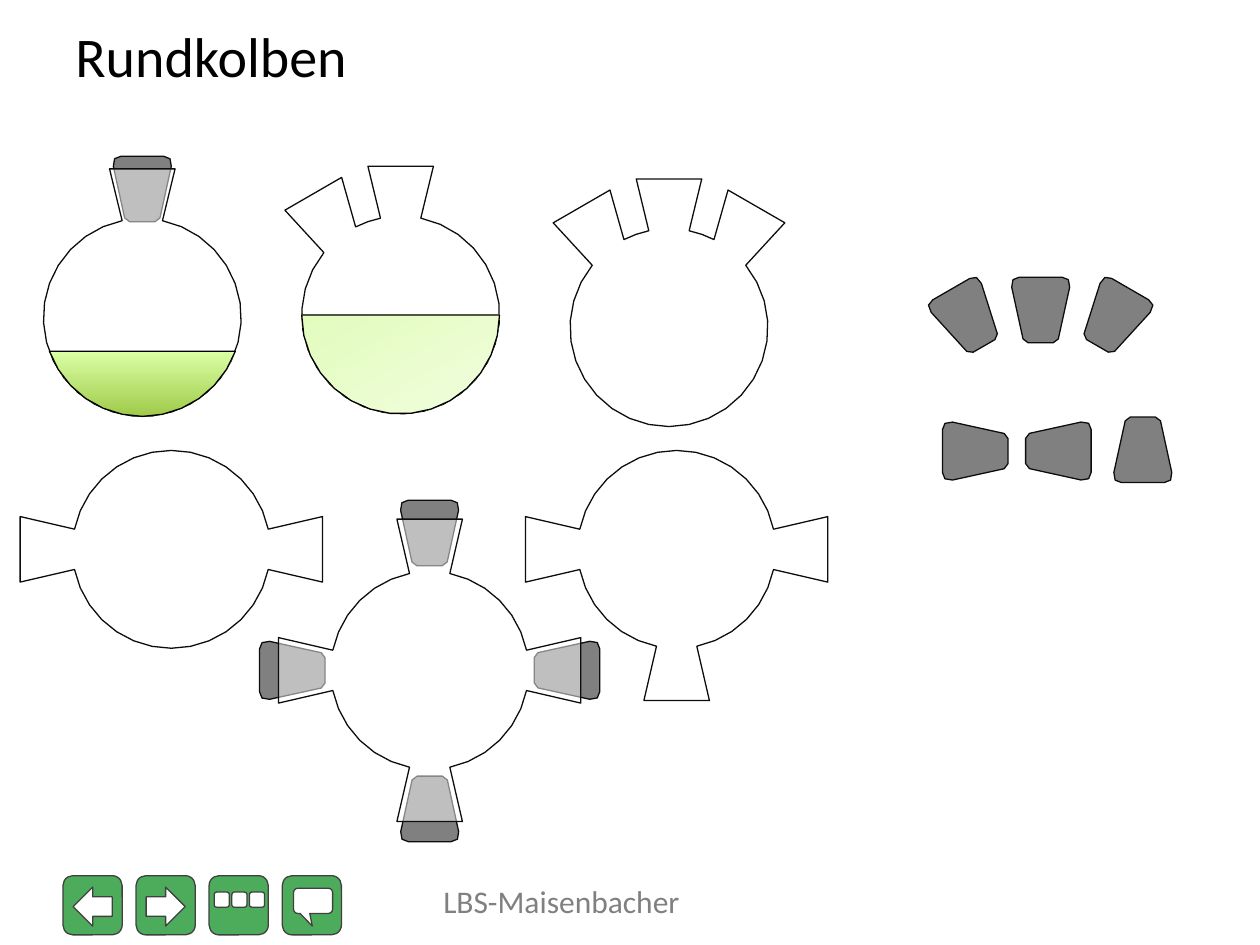
from math import asin, ceil, cos, degrees, radians, sin

from lxml.etree import SubElement
from pptx import Presentation
from pptx.dml.color import RGBColor
from pptx.enum.shapes import MSO_SHAPE
from pptx.enum.text import MSO_ANCHOR
from pptx.oxml.ns import qn
from pptx.util import Inches, Pt

WHITE = RGBColor(0xFF, 0xFF, 0xFF)
BLACK = RGBColor(0x00, 0x00, 0x00)
INK = RGBColor(0x0D, 0x0D, 0x0D)
RUBBER = RGBColor(0x80, 0x80, 0x80)
BUTTON = RGBColor(0x4D, 0xAC, 0x5C)
BUTTON_EDGE = RGBColor(0x40, 0x40, 0x40)
LIME = RGBColor(0xA0, 0xCA, 0x4A)
PALE_LIME = RGBColor(0xDA, 0xFF, 0xA5)
SOFT_GREEN = RGBColor(0xDA, 0xFD, 0xA7)
SOFTER_GREEN = RGBColor(0xE4, 0xFC, 0xC2)
MIST_GREEN = RGBColor(0xF5, 0xFF, 0xE7)

deck = Presentation()
deck.slide_width, deck.slide_height = Inches(10), Inches(7.5)
slide = deck.slides.add_slide(deck.slide_layouts[6])
CELL = deck.slide_width / 10


def paint(part, fill, edge):
    part.shadow.inherit = False
    part.fill.solid()
    part.fill.fore_color.rgb = fill
    part.line.color.rgb = edge
    part.line.width = Pt(0.75)
    return part


def outline(points, pivot, turn, fill, edge):
    corners = [(round(x * CELL), round(y * CELL)) for x, y in points]
    pen = slide.shapes.build_freeform(*corners[0], scale=1.0)
    pen.add_line_segments(corners[1:], close=True)
    part = pen.convert_to_shape()
    mid_x, mid_y = part.left + part.width / 2, part.top + part.height / 2
    c, s = cos(radians(turn)), sin(radians(turn))
    part.left = round(pivot[0] * CELL + mid_x * c - mid_y * s - part.width / 2)
    part.top = round(pivot[1] * CELL + mid_x * s + mid_y * c - part.height / 2)
    part.rotation = turn
    return paint(part, fill, edge)


BUTTON_SIZE, BUTTON_TOP = 0.47, 6.95
for column in range(4):
    left = 0.5 + 0.58 * column
    icons = [
        [(MSO_SHAPE.RIGHT_ARROW, 0.08, 0.09, 0.31, 0.31, 180)],
        [(MSO_SHAPE.RIGHT_ARROW, 0.08, 0.09, 0.31, 0.31, 0)],
        [(MSO_SHAPE.ROUNDED_RECTANGLE, 0.04 + 0.14 * n, 0.13, 0.12, 0.12, 0) for n in range(3)],
        [(MSO_SHAPE.ROUNDED_RECTANGULAR_CALLOUT, 0.09, 0.1, 0.31, 0.2, 0)],
    ][column]
    plate = (MSO_SHAPE.ROUNDED_RECTANGLE, 0, 0, BUTTON_SIZE, BUTTON_SIZE, 0)
    for preset, x, y, w, h, turn in [plate] + icons:
        box = [round(v * CELL) for v in (left + x, BUTTON_TOP + y, w, h)]
        part = slide.shapes.add_shape(preset, *box)
        part.rotation = turn
        paint(part, BUTTON if w == BUTTON_SIZE else WHITE, BUTTON_EDGE)
        if preset == MSO_SHAPE.ROUNDED_RECTANGULAR_CALLOUT:
            part.adjustments[0], part.adjustments[1] = -0.02, 1

STOPPER_SIDE = [(0.17, -0.26), (0.22, -0.24), (0.23, -0.18), (0.14, 0.23), (0.1, 0.26)]
stopper = STOPPER_SIDE + [(-x, y) for x, y in reversed(STOPPER_SIDE)]
for x, y, turn in [
    (1.13, 1.5, 0), (3.41, 4.23, 0), (4.5, 5.32, 90), (2.32, 5.32, 270), (3.41, 6.42, 180),
    (7.68, 2.52, 330), (8.84, 2.52, 30), (8.26, 2.46, 0),
    (7.74, 3.58, 270), (8.4, 3.58, 90), (9.07, 3.57, 180),
]:
    outline(stopper, (x, y), turn, RUBBER, INK)

BULB, MOUTH, THROAT = 0.785, 0.26, 0.16
ARC_STEP = 12
FLASKS = [
    ((1.13, 2.52), 0, 1.18, [(0, 0)], 50),
    ((5.37, 4.36), 180, 1.2, [(0, 0), (90, 0), (270, 0)], 50),
    ((5.31, 2.6), 330, 1.18, [(0, -0.12), (30, 0), (60, 0.12)], 50),
    ((3.18, 2.5), 330, 1.18, [(0, -0.12), (30, 0)], 100),
    ((1.36, 4.36), 90, 1.2, [(0, 0), (180, 0)], 50),
    ((3.41, 5.32), 180, 1.2, [(0, 0), (90, 0), (180, 0), (270, 0)], 50),
]
for center, turn, reach, necks, opacity in FLASKS:
    glass = []
    following = necks[1:] + [(necks[0][0] + 360, necks[0][1])]
    for (tilt, shift), (next_tilt, next_shift) in zip(necks, following):
        c, s = cos(radians(tilt)), sin(radians(tilt))
        for side in (shift - MOUTH, shift + MOUTH):
            glass.append((side * c + reach * s, side * s - reach * c))
        start = tilt + degrees(asin((shift + THROAT) / BULB))
        end = next_tilt + degrees(asin((next_shift - THROAT) / BULB))
        steps = ceil((end - start) / ARC_STEP)
        for step in range(steps + 1):
            angle = radians(start + (end - start) * step / steps)
            glass.append((BULB * sin(angle), -BULB * cos(angle)))
    flask = outline(glass, center, turn, WHITE, INK)
    if opacity < 100:
        tint = flask._element.spPr.find(".//" + qn("a:srgbClr"))
        SubElement(tint, qn("a:alpha"), val=str(opacity * 1000))

for center, turn, start, end, direction, stops in [
    ((1.13, 2.52), 0, 110, 250, 90, [(0, LIME), (100, PALE_LIME)]),
    ((3.18, 2.5), 330, 90, 270, 270, [(0, SOFT_GREEN), (35, SOFTER_GREEN), (100, MIST_GREEN)]),
]:
    steps = ceil((end - start) / ARC_STEP)
    angles = [radians(start + (end - start) * n / steps - turn) for n in range(steps + 1)]
    pool = [(BULB * sin(a), -BULB * cos(a)) for a in angles]
    liquid = outline(pool, center, turn, WHITE, BLACK)
    liquid.fill.gradient()
    liquid.fill.gradient_angle = direction
    ramp = liquid._element.spPr.find(".//" + qn("a:gsLst"))
    for stop in list(ramp):
        ramp.remove(stop)
    for position, color in stops:
        stop = SubElement(ramp, qn("a:gs"), pos=str(position * 1000))
        SubElement(stop, qn("a:srgbClr"), val=str(color))

for words, box, anchor, color, font_format in [
    ("Rundkolben", (0.5, 0.14, 9, 0.59), MSO_ANCHOR.MIDDLE, BLACK,
     {"name": "Calibri", "size": Pt(32)}),
    ("LBS-Maisenbacher", (3.42, 6.95, 3.17, 0.4), MSO_ANCHOR.TOP, RUBBER,
     {"name": "Calibri", "size": Pt(18)}),
]:
    frame = slide.shapes.add_textbox(*[round(v * CELL) for v in box]).text_frame
    frame.word_wrap = True
    frame.vertical_anchor = anchor
    run = frame.paragraphs[0].add_run()
    run.text = words
    run.font.color.rgb = color
    for key, value in font_format.items():
        setattr(run.font, key, value)

deck.save("out.pptx")
